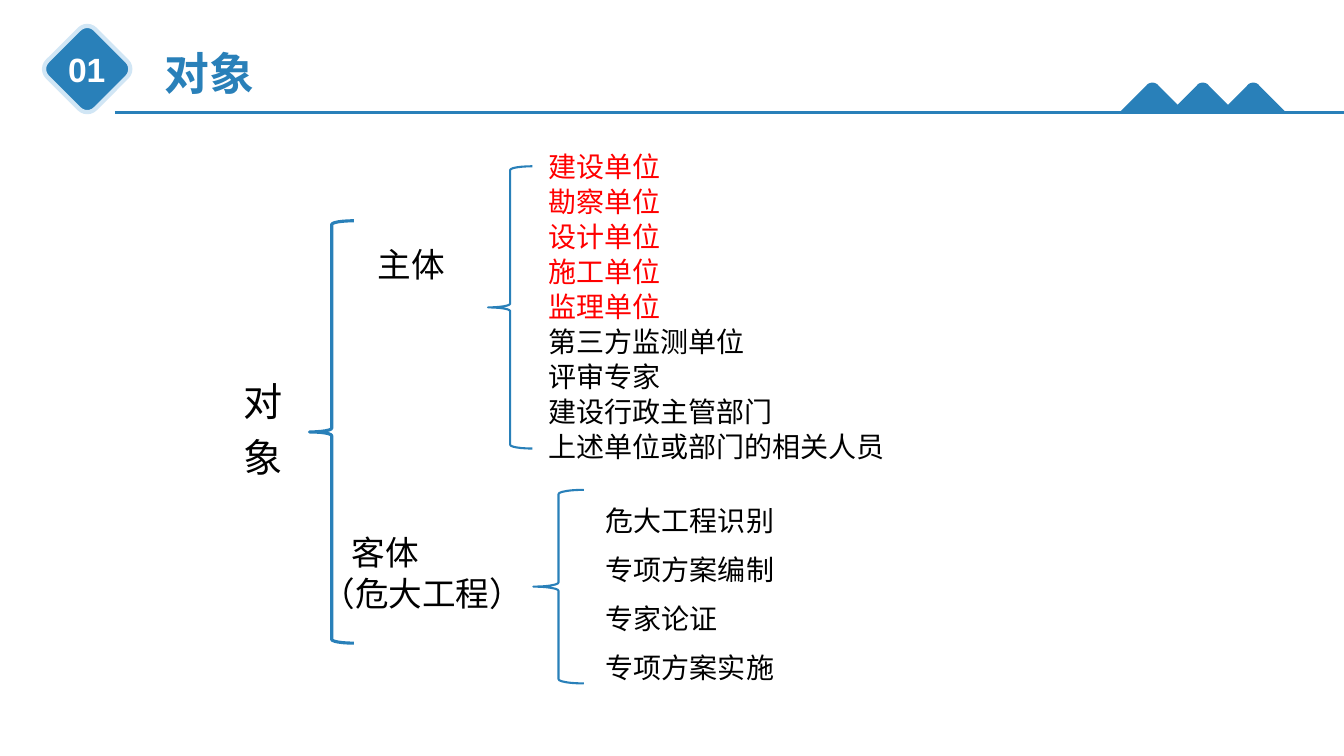
from lxml import etree
from pptx import Presentation
from pptx.dml.color import RGBColor
from pptx.enum.shapes import MSO_CONNECTOR as Connector, MSO_SHAPE as Preset
from pptx.enum.text import MSO_ANCHOR as Anchor, MSO_AUTO_SIZE as AutoSize, PP_ALIGN as Align
from pptx.oxml.ns import qn
from pptx.util import Inches, Pt

BLUE, PALE, RED, BLACK, WHITE = "2980B9", "D1E6F5", "FF0000", "000000", "FFFFFF"
LATIN, CJK = "Arial", "Noto Sans CJK SC"


def rgb(code):
    return RGBColor.from_string(code)


def assign(target, values):
    for name, value in values.items():
        setattr(target, name, value)


class ObjectSlide:
    """Draws the styled elements of one slide."""

    def __init__(self, deck):
        self.slide = deck.slides.add_slide(deck.slide_layouts[5])
        self.shapes = self.slide.shapes

    def place(self, shape, box):
        names = ("left", "top", "width", "height")
        assign(shape, dict(zip(names, map(Inches, box))))

    def fill_text(self, shape, lines, size, font=CJK, color=BLACK, bold=False,
                  wrap=False, align=Align.LEFT, pitch=None):
        frame = shape.text_frame
        assign(frame, {"word_wrap": wrap, "auto_size": AutoSize.NONE,
                       "vertical_anchor": Anchor.TOP})
        frame.text = "\n".join(lines)
        for paragraph in frame.paragraphs:
            assign(paragraph, {"alignment": align, "line_spacing": pitch and Pt(pitch)})
            run = paragraph.runs[0]
            assign(run.font, {"name": font, "size": Pt(size), "bold": bold})
            run.font.color.rgb = rgb(color)
            etree.SubElement(run.font._element, qn("a:ea")).set("typeface", CJK)
        return frame

    def title(self, text, box, **style):
        self.place(self.shapes.title, box)
        self.fill_text(self.shapes.title, [text], **style)

    def text(self, lines, box, **style):
        return self.fill_text(self.shapes.add_textbox(*map(Inches, box)), lines, **style)

    def preset(self, kind, box, line, width, fill=None, rotation=0):
        shape = self.shapes.add_shape(kind, *map(Inches, box))
        shape.rotation = rotation
        self.paint(shape, fill)
        shape.line.color.rgb = rgb(line)
        shape.line.width = Pt(width)

    def paint(self, shape, fill):
        shape.shadow.inherit = False
        if fill:
            shape.fill.solid()
            shape.fill.fore_color.rgb = rgb(fill)
        else:
            shape.fill.background()

    def brace(self, box, width):
        self.preset(Preset.LEFT_BRACE, box, BLUE, width)

    def rule(self, left, right, y):
        line = self.shapes.add_connector(
            Connector.STRAIGHT, *map(Inches, (left, y, right, y)))
        line.line.color.rgb = rgb(BLUE)
        line.line.width = Pt(2.25)
        etree.SubElement(line._element.spPr, qn("a:effectLst"))

    def peak(self, center, top, base):
        curve = []
        for step in range(7):
            t = step / 6
            x = 3 * t * (1 - t) ** 2 * 0.02 + 3 * t ** 2 * (1 - t) * 0.05 + t ** 3 * 0.06
            y = 3 * t ** 2 * (1 - t) * 0.01 + t ** 3 * 0.03
            curve.append((x, top + y))
        half = curve + [(0.33, base)]
        outline = [(center - x, y) for x, y in reversed(half)]
        outline += [(center + x, y) for x, y in half[1:]]
        points = [(Inches(x), Inches(y)) for x, y in outline]
        builder = self.shapes.build_freeform(*points[0], scale=1.0)
        builder.add_line_segments(points[1:], close=True)
        mountain = builder.convert_to_shape()
        self.paint(mountain, BLUE)
        mountain.line.fill.background()


def main():
    deck = Presentation()
    assign(deck, {"slide_width": Inches(13.33), "slide_height": Inches(7.5)})
    page = ObjectSlide(deck)

    page.preset(Preset.ROUNDED_RECTANGLE, (0.53, 0.35, 0.67, 0.67), PALE, 3, BLUE, 45)
    page.rule(1.14, 13.33, 1.12)
    page.title("对象", (1.53, 0.4, 1.09, 0.64), size=32, font=LATIN, color=BLUE, bold=True)
    page.text(["01"], (0.57, 0.44, 0.58, 0.5), size=24, font=LATIN, color=WHITE,
              bold=True, align=Align.CENTER)
    for index in range(3):
        page.peak(11.43 + index * 0.5, 0.82, 1.12)

    root = page.text(["对象"], (2.21, 3.69, 0.67, 1.09), size=28, font=LATIN)
    root._txBody.bodyPr.set("vert", "eaVert")
    root.paragraphs[0].runs[0].font._element.set("spc", "1200")
    page.brace((3.07, 2.19, 0.44, 4.19), 2.25)

    page.text(["主体"], (3.65, 2.37, 0.87, 0.5), size=24)
    target = page.text(["客体", "（危大工程）"], (3.09, 5.23, 2.2, 0.91), size=24)
    target.paragraphs[0]._p.get_or_add_pPr().set("marL", str(Inches(0.3)))

    page.brace((4.84, 1.65, 0.44, 2.8), 1.5)
    parties = ["建设单位", "勘察单位", "设计单位", "施工单位", "监理单位",
               "第三方监测单位", "评审专家", "建设行政主管部门", "上述单位或部门的相关人员"]
    subjects = page.text(parties, (5.34, 1.42, 3.67, 3.23), size=20, wrap=True, pitch=25)
    for paragraph in subjects.paragraphs[:5]:
        paragraph.runs[0].font.color.rgb = rgb(RED)

    page.brace((5.29, 4.86, 0.5, 1.92), 1.5)
    page.text(["危大工程识别", "专项方案编制", "专家论证", "专项方案实施"],
              (5.91, 4.79, 2.71, 2.06), size=20, wrap=True, pitch=35)

    deck.save("out.pptx")


if __name__ == "__main__":
    main()
